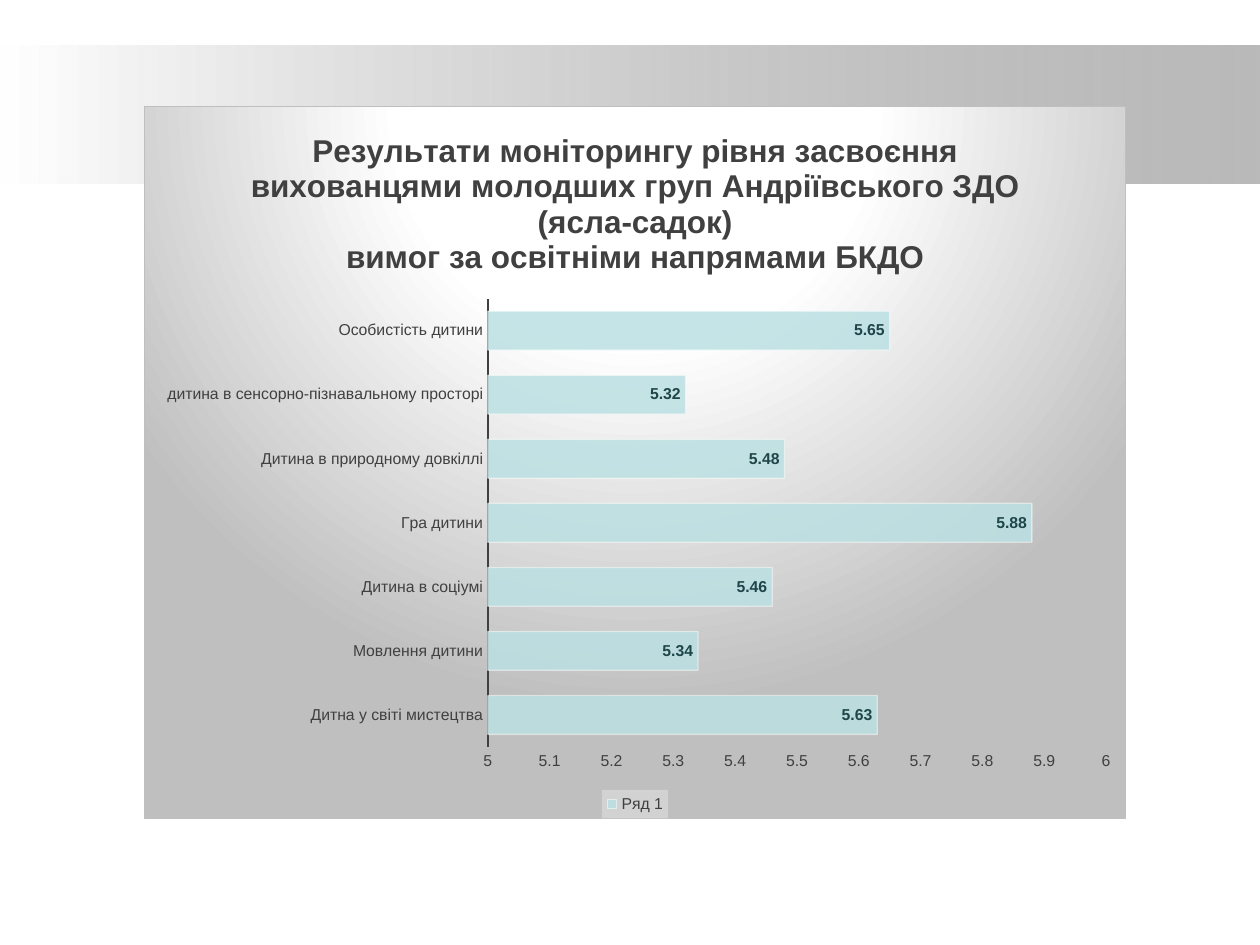
"""Build the slide with the monitoring results bar chart."""
from lxml import etree
from pptx import Presentation
from pptx.chart.data import CategoryChartData
from pptx.dml.color import RGBColor
from pptx.enum import chart as ch, shapes
from pptx.oxml import parse_xml
from pptx.oxml.ns import nsdecls, qn
from pptx.util import Inches, Pt

COLORS = {"white": "FFFFFF", "band": "808080", "panel": "BFBFBF", "text": "404040",
          "bar": "BBE0E3", "label": "1E4649", "legend": "F2F2F2", "base": "000000"}


def add_line(frame, content, size=18, color="text", bold=True):
    line = frame.paragraphs[0]
    if line.runs:
        line = frame.add_paragraph()
    run = line.add_run()
    run.text = content
    run.font.name, run.font.size, run.font.bold = "Arial", Pt(size), bold
    run.font.color.rgb = RGBColor.from_string(COLORS[color])


def gradient(stops, direction):
    marks = "".join(
        f'<a:gs pos="{pos * 1000}"><a:srgbClr val="{COLORS[color]}">'
        f'<a:alpha val="{alpha * 1000}"/></a:srgbClr></a:gs>'
        for pos, color, alpha in stops)
    return parse_xml(f'<a:gradFill {nsdecls("a")} rotWithShape="1">'
                     f'<a:gsLst>{marks}</a:gsLst>{direction}</a:gradFill>')


prs = Presentation()
prs.slide_width, prs.slide_height = Inches(10), Inches(7.5)
slide = prs.slides.add_slide(prs.slide_layouts[6])

band = slide.shapes.add_shape(shapes.MSO_SHAPE.RECTANGLE, Inches(0), Inches(0.36),
                              Inches(10), Inches(1.1))
band.shadow.inherit = False
band.line.fill.background()
band_fill = gradient([(0, "white", 100), (100, "band", 54)], '<a:lin ang="0" scaled="1"/>')
band._element.spPr.find(qn("a:prstGeom")).addnext(band_fill)

results = CategoryChartData(number_format="General")
for direction, score in [
        ("Дитна у світі мистецтва", 5.63),
        ("Мовлення дитини", 5.34),
        ("Дитина в соціумі", 5.46),
        ("Гра дитини", 5.88),
        ("Дитина в природному довкіллі", 5.48),
        ("дитина в сенсорно-пізнавальному просторі", 5.32),
        ("Особистість дитини", 5.65)]:
    results.add_category(direction)
    results.add_series("Ряд 1", []) if not len(results) else None
    results[0].add_data_point(score)

chart = slide.shapes.add_chart(ch.XL_CHART_TYPE.BAR_CLUSTERED, Inches(1.14), Inches(0.84),
                               Inches(7.8), Inches(5.66), results).chart
chart.font.name, chart.font.size = "Arial", Pt(10)
chart.font.color.rgb = RGBColor.from_string(COLORS["base"])

panel = parse_xml(f'<c:spPr {nsdecls("c", "a")}><a:ln w="9525"><a:solidFill>'
                  f'<a:srgbClr val="{COLORS["panel"]}"/></a:solidFill></a:ln></c:spPr>')
panel.insert(0, gradient(
    [(0, "white", 100), (39, "white", 100), (100, "panel", 100)],
    '<a:path path="circle"><a:fillToRect l="50000" t="-80000" r="50000" b="180000"/></a:path>'))
chart._chartSpace.find(qn("c:chart")).addnext(panel)

chart.has_title = True
title = chart.chart_title
title.include_in_layout = False
for heading in ("Результати моніторингу рівня засвоєння вихованцями молодших груп "
                "Андріївського ЗДО (ясла-садок)",
                "вимог за освітніми напрямами БКДО"):
    add_line(title.text_frame, heading)

directions, scores = chart.category_axis, chart.value_axis
for axis in (directions, scores):
    axis.major_tick_mark = axis.minor_tick_mark = ch.XL_TICK_MARK.NONE
    axis.has_major_gridlines = False
directions.format.line.width = Pt(1.5)
directions.format.line.color.rgb = RGBColor.from_string(COLORS["text"])
scores.format.line.fill.background()
scores.minimum_scale, scores.maximum_scale, scores.major_unit = 5, 6, 0.1
scores.tick_labels.number_format = "General"
scores.tick_labels.number_format_is_linked = False

chart.has_legend = True
legend = chart.legend
legend.position = ch.XL_LEGEND_POSITION.BOTTOM
legend.include_in_layout = False

plot = chart.plots[0]
plot.gap_width = 65
plot.vary_by_categories = False
bars = plot.series[0]
bars.format.fill.solid()
bars.format.fill.fore_color.rgb = RGBColor.from_string(COLORS["bar"])
bars.format.line.width = Pt(0.75)
bars.format.line.color.rgb = RGBColor.from_string(COLORS["white"])
for color, alpha in zip(bars._element.spPr.iter(qn("a:srgbClr")), (85, 50)):
    etree.SubElement(color, qn("a:alpha")).set("val", str(alpha * 1000))

labels = bars.data_labels
labels.show_value = True
labels.position = ch.XL_LABEL_POSITION.INSIDE_END

for font, color, bold in [(directions.tick_labels.font, "text", False),
                          (scores.tick_labels.font, "text", False),
                          (legend.font, "text", False),
                          (labels.font, "label", True)]:
    font.name, font.size, font.bold = "Arial", Pt(9), bold
    font.color.rgb = RGBColor.from_string(COLORS[color])

legend._element.find(qn("c:txPr")).addprevious(parse_xml(
    f'<c:spPr {nsdecls("c", "a")}><a:solidFill><a:srgbClr val="{COLORS["legend"]}">'
    '<a:alpha val="39000"/></a:srgbClr></a:solidFill></c:spPr>'))

plot_area = chart._chartSpace.find(qn("c:chart")).find(qn("c:plotArea"))
for old_layout in plot_area.findall(qn("c:layout")):
    plot_area.remove(old_layout)
sizes = "".join(f'<c:{key} val="{value}"/>' for key, value in
                [("layoutTarget", "inner"), ("xMode", "edge"), ("yMode", "edge"),
                 ("x", 0.35), ("y", 0.27), ("w", 0.63), ("h", 0.63)])
plot_area.insert(0, parse_xml(
    f'<c:layout {nsdecls("c")}><c:manualLayout>{sizes}</c:manualLayout></c:layout>'))

prs.save("out.pptx")
